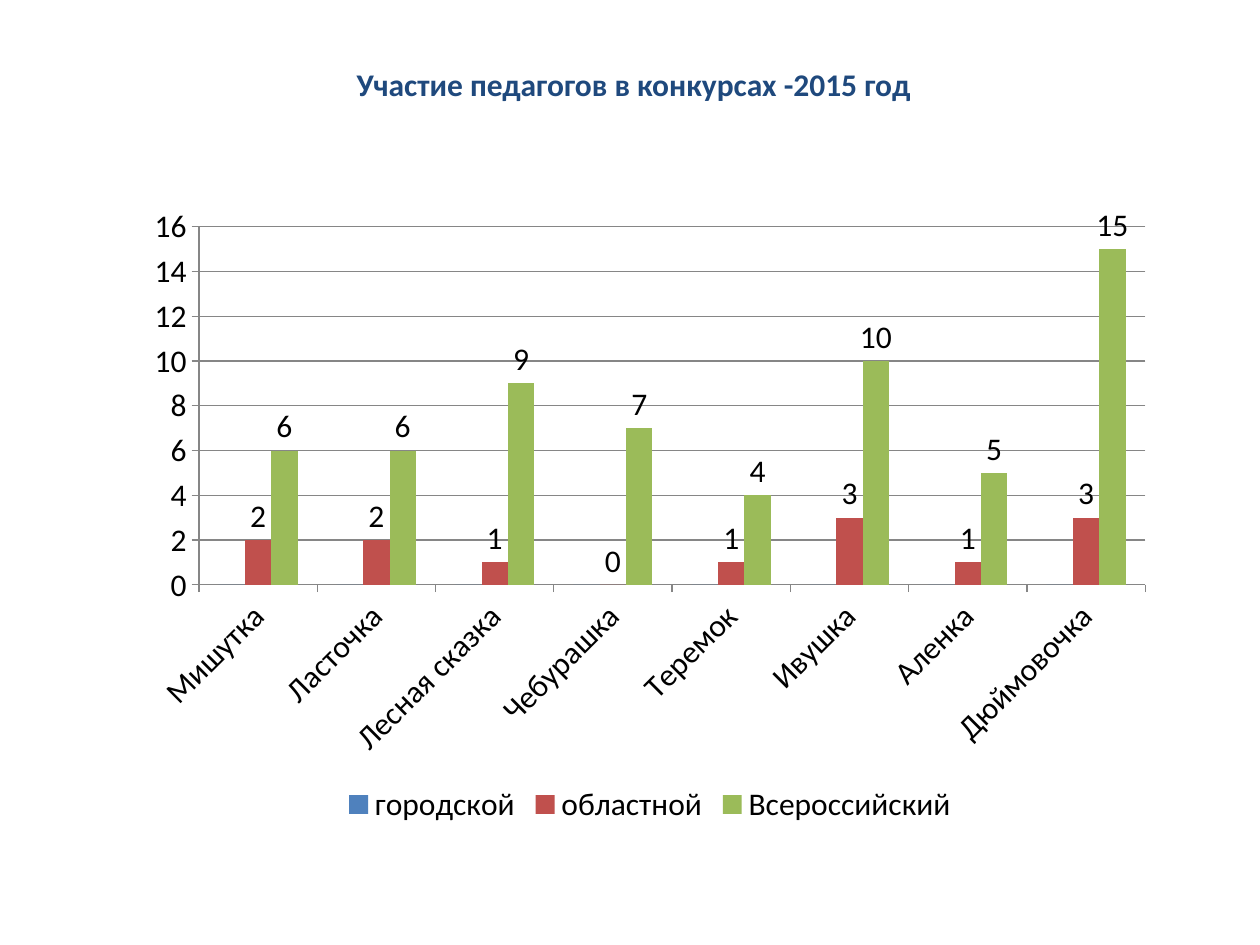
from pptx import Presentation
from pptx.chart.data import CategoryChartData
from pptx.dml.color import RGBColor
from pptx.enum.chart import (
    XL_CHART_TYPE as ChartType,
    XL_LABEL_POSITION as LabelPosition,
    XL_LEGEND_POSITION as LegendPosition,
    XL_TICK_MARK as TickMark,
)
from pptx.enum.text import MSO_ANCHOR as Anchor, PP_ALIGN as Align
from pptx.util import Pt

PX = 914400 // 126
FONT = "Calibri"
COLORS = {
    "title": "1F497D",
    "text": "000000",
    "line": "868686",
    "городской": "4F81BD",
    "областной": "C0504D",
    "Всероссийский": "9BBB59",
}
KINDERGARTENS = ["Мишутка", "Ласточка", "Лесная сказка", "Чебурашка",
                 "Теремок", "Ивушка", "Аленка", "Дюймовочка"]
CONTESTS = {
    "городской": [0] * len(KINDERGARTENS),
    "областной": [2, 2, 1, 0, 1, 3, 1, 3],
    "Всероссийский": [6, 6, 9, 7, 4, 10, 5, 15],
}


def color(name):
    """Return the named colour."""
    return RGBColor.from_string(COLORS[name])


def style_font(font, name, bold=False):
    """Give a font the common face and size, and the named colour."""
    font.name, font.size, font.bold = FONT, Pt(18), bold
    font.color.rgb = color(name)


def add_title(page, box, text):
    """Place the title placeholder in the box and fill it."""
    title = page.shapes.title
    title.left, title.top, title.width, title.height = (n * PX for n in box)
    frame = title.text_frame
    frame.word_wrap = False
    frame.vertical_anchor = Anchor.TOP
    para = frame.paragraphs[0]
    para.alignment = Align.LEFT
    span = para.add_run()
    span.text = text
    style_font(span.font, "title", bold=True)


def style_axis(axis):
    """Give an axis outside ticks and a thin grey line."""
    axis.major_tick_mark = TickMark.OUTSIDE
    axis.minor_tick_mark = TickMark.NONE
    axis.format.line.color.rgb = color("line")
    axis.format.line.width = Pt(0.75)
    style_font(axis.tick_labels.font, "text")


def add_contest_chart(page, box):
    """Draw the clustered columns of contest entries in the box."""
    data = CategoryChartData(number_format="General")
    data.categories = KINDERGARTENS
    for name, values in CONTESTS.items():
        data.add_series(name, values)
    chart = page.shapes.add_chart(
        ChartType.COLUMN_CLUSTERED, *(n * PX for n in box), data).chart
    style_font(chart.font, "text")
    chart.has_title = False
    chart.has_legend = True
    chart.legend.position = LegendPosition.BOTTOM
    chart.legend.include_in_layout = False
    style_font(chart.legend.font, "text")

    style_axis(chart.category_axis)
    style_axis(chart.value_axis)
    label_body = chart.category_axis._element.find(
        "{*}txPr/{*}bodyPr")
    label_body.set("rot", "-2700000")
    label_body.set("vert", "horz")
    chart.value_axis.has_major_gridlines = True
    grid = chart.value_axis.major_gridlines.format.line
    grid.color.rgb = color("line")
    grid.width = Pt(0.75)

    plot = chart.plots[0]
    plot.gap_width = 150
    plot.overlap = 0
    plot.vary_by_categories = False
    for series in plot.series:
        series.format.fill.solid()
        series.format.fill.fore_color.rgb = color(series.name)
        if any(series.values):
            labels = series.data_labels
            labels.show_value = True
            labels.position = LabelPosition.OUTSIDE_END
            style_font(labels.font, "text")


def main():
    """Build the slide and save the deck."""
    deck = Presentation()
    deck.slide_width, deck.slide_height = 1260 * PX, 945 * PX
    page = deck.slides.add_slide(deck.slide_layouts.get_by_name("Title Only"))
    add_title(page, (344, 59, 583, 50), "Участие педагогов в конкурсах -2015 год")
    add_contest_chart(page, (134, 195, 1032, 635))
    deck.save("out.pptx")


if __name__ == "__main__":
    main()
